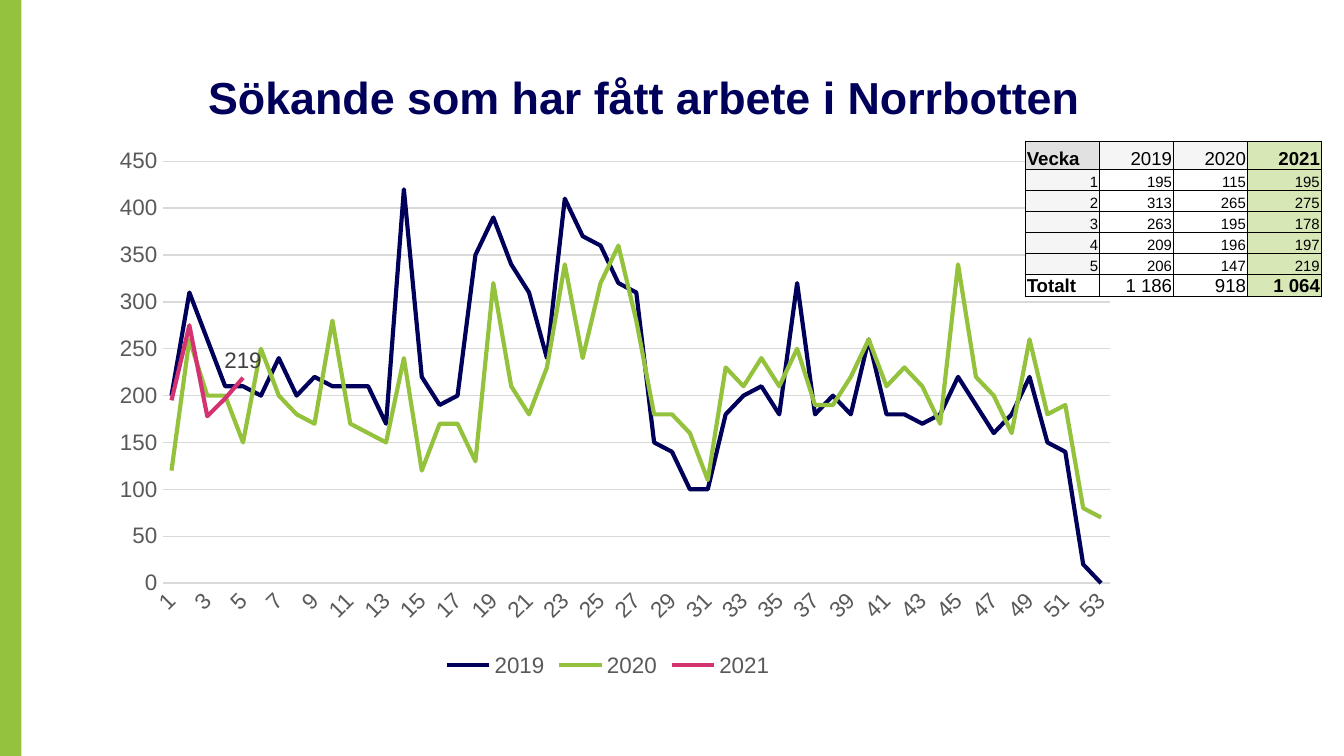
from lxml import etree
from pptx import Presentation
from pptx import util as u
from pptx.chart.data import CategoryChartData
from pptx.dml.color import RGBColor
from pptx.enum import chart as ch, shapes, text
from pptx.oxml import parse_xml
from pptx.oxml.ns import nsdecls, qn

FONT = "Arial"
COLORS = {"navy": "00005A", "green": "95C23D", "pink": "D43372", "grid": "D9D9D9",
          "axis": "595959", "label": "404040", "black": "000000", "white": "FFFFFF",
          "corner": "E1E1E1", "head": "F5F5F5", "current": "D8E7B6"}
YEARS = ["2019", "2020", "2021"]
WEEKS = [(195, 115, 195), (313, 265, 275), (263, 195, 178), (209, 196, 197), (206, 147, 219)]
CHART_WEEKS = 53
APPLICANTS = {
    "2019": [200, 310, 260, 210, 210, 200, 240, 200, 220, 210, 210, 210, 170, 420, 220, 190,
             200, 350, 390, 340, 310, 240, 410, 370, 360, 320, 310, 150, 140, 100, 100, 180,
             200, 210, 180, 320, 180, 200, 180, 260, 180, 180, 170, 180, 220, 190, 160, 180,
             220, 150, 140, 20, 0],
    "2020": [120, 260, 200, 200, 150, 250, 200, 180, 170, 280, 170, 160, 150, 240, 120, 170,
             170, 130, 320, 210, 180, 230, 340, 240, 320, 360, 280, 180, 180, 160, 110, 230,
             210, 240, 210, 250, 190, 190, 220, 260, 210, 230, 210, 170, 340, 220, 200, 160,
             260, 180, 190, 80, 70],
    "2021": [week[2] for week in WEEKS] + [None] * (CHART_WEEKS - len(WEEKS)),
}


def rgb(name):
    """Return the named colour."""
    return RGBColor.from_string(COLORS[name])


def style_font(font, size, color, bold=False):
    """Set typeface, size, colour and weight."""
    font.name, font.size, font.bold = FONT, u.Pt(size), bold
    font.color.rgb = rgb(color)


def add_side_bar(slide, x, y, w, h):
    """Draw the coloured bar along the slide edge."""
    sp = slide.shapes.add_shape(shapes.MSO_SHAPE.RECTANGLE, *map(u.Inches, (x, y, w, h)))
    sp.shadow.inherit = False
    sp.fill.solid()
    sp.fill.fore_color.rgb = rgb("green")
    sp.line.fill.background()


def add_title(slide, x, y, w, h, title):
    """Place and format the title placeholder."""
    sp = slide.shapes.title
    sp.left, sp.top, sp.width, sp.height = map(u.Inches, (x, y, w, h))
    tf = sp.text_frame
    tf.margin_left = tf.margin_right = tf.margin_top = tf.margin_bottom = 0
    tf.vertical_anchor = text.MSO_ANCHOR.BOTTOM
    tf.word_wrap = True
    p = tf.paragraphs[0]
    p.alignment = text.PP_ALIGN.CENTER
    r = p.add_run()
    r.text = title
    style_font(r.font, 24, "navy", True)


def set_plot_layout(chart, x, y, w, h):
    """Fix the inner plot area as fractions of the chart."""
    area = chart._chartSpace.find(".//" + qn("c:plotArea"))
    for old in area.findall(qn("c:layout")):
        area.remove(old)
    layout = parse_xml(f"<c:layout {nsdecls('c')}><c:manualLayout/></c:layout>")
    values = [("layoutTarget", "inner"), ("xMode", "edge"), ("yMode", "edge"),
              ("x", x), ("y", y), ("w", w), ("h", h)]
    for tag, value in values:
        etree.SubElement(layout[0], qn(f"c:{tag}")).set("val", str(value))
    area.insert(0, layout)


def style_axes(chart):
    """Format the week axis and the value axis."""
    for axis in (chart.category_axis, chart.value_axis):
        axis.major_tick_mark = axis.minor_tick_mark = ch.XL_TICK_MARK.NONE
        style_font(axis.tick_labels.font, 12, "axis")
    weeks, values = chart.category_axis, chart.value_axis
    weeks.format.line.color.rgb = rgb("grid")
    weeks.format.line.width = u.Pt(0.75)
    weeks._element.find(qn("c:txPr")).find(qn("a:bodyPr")).set("rot", "-2700000")
    values.minimum_scale, values.maximum_scale, values.major_unit = 0, 450, 50
    values.format.line.fill.background()
    values.tick_labels.number_format = "#,##0"
    values.tick_labels.number_format_is_linked = False
    values.major_gridlines.format.line.color.rgb = rgb("grid")
    values.major_gridlines.format.line.width = u.Pt(0.75)


def add_line_chart(slide, x, y, w, h):
    """Add the weekly line chart with one line per year."""
    data = CategoryChartData()
    data.categories = [str(week) for week in range(1, CHART_WEEKS + 1)]
    for year in YEARS:
        data.add_series(year, APPLICANTS[year])
    chart = slide.shapes.add_chart(ch.XL_CHART_TYPE.LINE, *map(u.Inches, (x, y, w, h)), data).chart
    chart.has_title = False
    style_font(chart.font, 10, "black")
    chart.has_legend = True
    chart.legend.position = ch.XL_LEGEND_POSITION.BOTTOM
    chart.legend.include_in_layout = False
    style_font(chart.legend.font, 12, "axis")
    style_axes(chart)
    set_plot_layout(chart, 0.58 / w, 0.15 / h, 7.05 / w, 3.14 / h)
    plot = chart.plots[0]
    plot.vary_by_categories = False
    for series, color in zip(plot.series, ("navy", "green", "pink")):
        series.smooth = False
        series.marker.style = ch.XL_MARKER_STYLE.NONE
        series.format.line.color.rgb = rgb(color)
        series.format.line.width = u.Pt(2.25)
    label = plot.series[2].points[len(WEEKS) - 1].data_label
    style_font(label.font, 12, "label")
    label.position = ch.XL_LABEL_POSITION.ABOVE


def add_borders(cell):
    """Give a cell thin black borders on all sides."""
    tc_pr = cell._tc.get_or_add_tcPr()
    for side in "LRTB":
        tc_pr.append(parse_xml(
            f'<a:ln{side} {nsdecls("a")} w="6350"><a:solidFill>'
            f'<a:srgbClr val="{COLORS["black"]}"/></a:solidFill></a:ln{side}>'))


def cell_fill(row, col, last):
    """Return the fill colour name of a cell, or None."""
    if col == 3:
        return "current"
    if row == last:
        return None
    if row == 0:
        return "head" if col else "corner"
    return "white" if col else "head"


def fill_cell(cell, value, row, col, last):
    """Write and format one table cell."""
    edge = row in (0, last)
    cell.margin_left = cell.margin_right = cell.margin_top = u.Inches(0.01)
    cell.margin_bottom = 0
    cell.vertical_anchor = text.MSO_ANCHOR.BOTTOM
    add_borders(cell)
    color = cell_fill(row, col, last)
    if color:
        cell.fill.solid()
        cell.fill.fore_color.rgb = rgb(color)
    else:
        cell.fill.background()
    p = cell.text_frame.paragraphs[0]
    p.alignment = text.PP_ALIGN.LEFT if edge and col == 0 else text.PP_ALIGN.RIGHT
    r = p.add_run()
    r.text = value
    style_font(r.font, 10 if edge else 8, "black", edge and col in (0, 3))


def add_week_table(slide, x, y, w, h):
    """Add the table of weekly values and totals."""
    totals = [f"{sum(values):,}".replace(",", " ") for values in zip(*WEEKS)]
    body = [[str(v) for v in (n, *values)] for n, values in enumerate(WEEKS, 1)]
    rows = [["Vecka", *YEARS], *body, ["Totalt", *totals]]
    last, head = len(rows) - 1, 0.21
    table = slide.shapes.add_table(len(rows), 4, *map(u.Inches, (x, y, w, h))).table
    table.first_row = table.horz_banding = False
    for column in table.columns:
        column.width = u.Inches(w / 4)
    for i, row in enumerate(rows):
        table.rows[i].height = u.Inches((h - head) / last if i else head)
        for j, value in enumerate(row):
            fill_cell(table.cell(i, j), value, i, j, last)


def main():
    """Build and save the slide."""
    prs = Presentation()
    prs.slide_width, prs.slide_height = u.Inches(10), u.Inches(10 * 9 / 16)
    slide = prs.slides.add_slide(prs.slide_layouts[5])
    add_side_bar(slide, 0, 0, 0.16, 5.63)
    add_line_chart(slide, 0.63, 1.05, 7.79, 4.03)
    add_title(slide, 0.73, 0.18, 8.12, 0.74, "Sökande som har fått arbete i Norrbotten")
    add_week_table(slide, 7.63, 1.05, 2.2, 1.15)
    prs.save("out.pptx")


if __name__ == "__main__":
    main()
